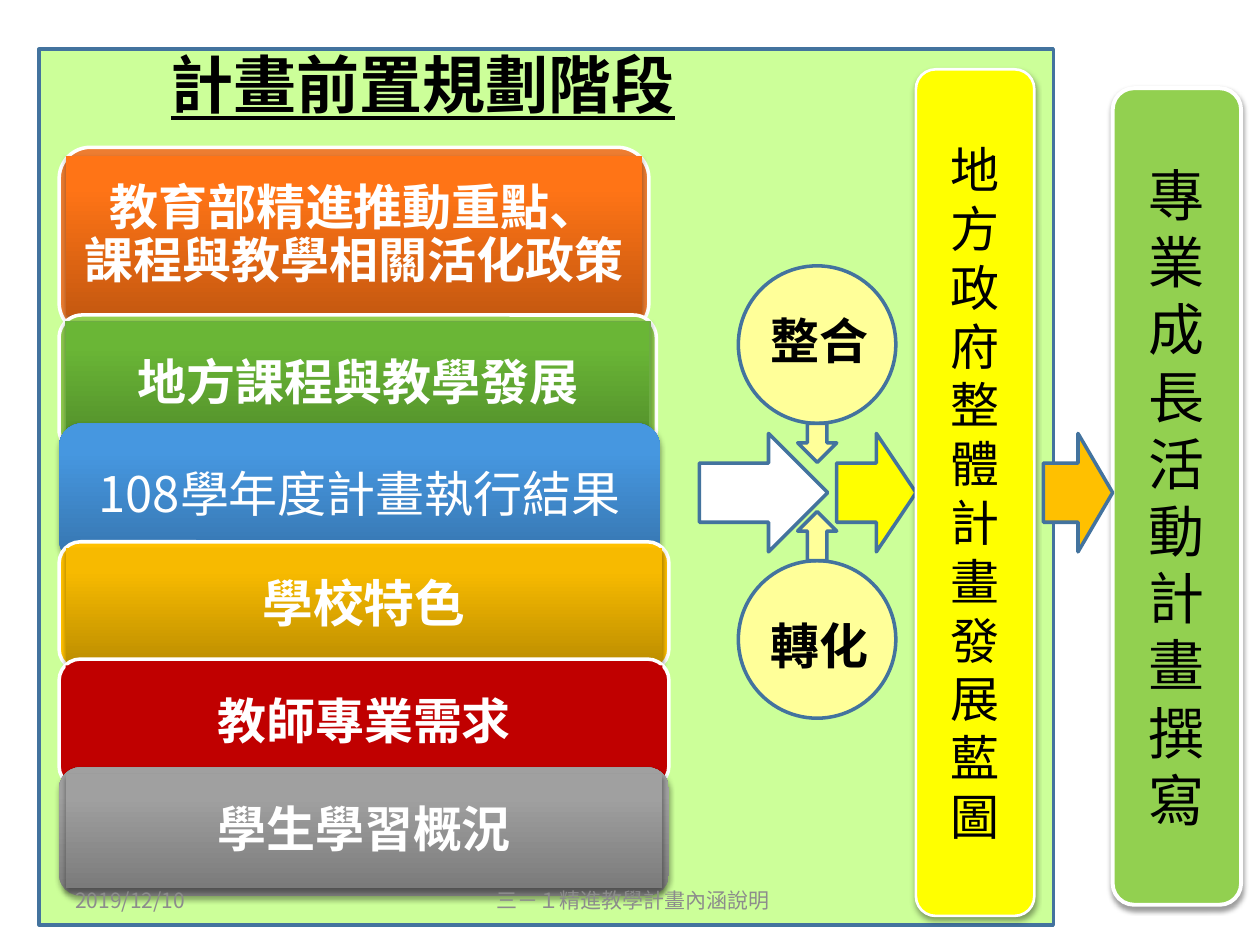
from lxml import etree
from pptx import Presentation
from pptx.dml.color import RGBColor
from pptx.enum import shapes, text
from pptx.oxml import ns
from pptx.util import Pt

SANS, LATIN = "Noto Sans CJK SC", "Calibri"
BLACK = RGBColor(0x00, 0x00, 0x00)
WHITE = RGBColor(0xFF, 0xFF, 0xFF)
GRAY = RGBColor(0x8C, 0x8C, 0x8C)
NAVY = RGBColor(0x43, 0x73, 0x9E)
MINT = RGBColor(0xCC, 0xFF, 0x99)
GREEN = RGBColor(0x92, 0xD0, 0x50)
CREAM = RGBColor(0xFF, 0xFF, 0x99)
YELLOW = RGBColor(0xFF, 0xFF, 0x00)
AMBER = RGBColor(0xFF, 0xC0, 0x00)
ORANGE = RGBColor(0xED, 0x7D, 0x31)
RED = RGBColor(0xC0, 0x00, 0x00)
LEAF = RGBColor(0x6D, 0xAC, 0x43)
# Gradients are lists: bottom colour, top colour
ORANGE_FADE = [RGBColor(0xC6, 0x59, 0x10), RGBColor(0xFF, 0x74, 0x16)]
GREEN_FADE = [RGBColor(0x51, 0x8D, 0x2A), RGBColor(0x6A, 0xB6, 0x36)]
BLUE_FADE = [RGBColor(0x36, 0x74, 0xAD), RGBColor(0x46, 0x97, 0xE0)]
GOLD_FADE = [RGBColor(0xBE, 0x8F, 0x00), RGBColor(0xF7, 0xBA, 0x00)]
GRAY_FADE = [RGBColor(0x7B, 0x7B, 0x7B), RGBColor(0xA0, 0xA0, 0xA0)]

CENTER, LEFT = text.PP_ALIGN.CENTER, text.PP_ALIGN.LEFT
MIDDLE, TOP = text.MSO_ANCHOR.MIDDLE, text.MSO_ANCHOR.TOP
SHAPE = shapes.MSO_SHAPE

# Content
TITLE = "計畫前置規劃階段"
CARD_LEFT, FACE_INSET = 33.8, 3.7
# lines, top, width, height, frame fill, frame outline, face (top, height, fill, outline), size
CARDS = [
    (["教育部精進推動重點、", "課程與教學相關活化政策"], 84.2, 337, 106.6,
     ORANGE, WHITE, (89.3, 90.7, ORANGE_FADE, None), 28),
    (["地方課程與教學發展"], 180, 341.3, 78.5,
     GREEN, WHITE, (183.6, 71.3, GREEN_FADE, LEAF), 28),
    (["108學年度計畫執行結果"], 241.9, 343.4, 79.9, BLUE_FADE, None, None, 28),
    (["學校特色"], 309.6, 348.5, 73.4,
     AMBER, WHITE, (313.2, 65.5, GOLD_FADE, None), 29),
    (["教師專業需求"], 376.6, 348.5, 73.4,
     RED, WHITE, (380.2, 65.5, RED, None), 28),
    (["學生學習概況"], 438.5, 348.5, 73.4,
     GRAY_FADE, None, (442.1, 65.5, GRAY_FADE, None), 28),
]
CIRCLE_LEFT, CIRCLE_SIZE = 421.9, 90
CIRCLES = [("整合", 151.9, 174.2), ("轉化", 320.4, 348.5)]  # label, top, label top
FLOW_TOP, FLOW_HEIGHT = 247.7, 67.7
ARROWS = [
    (SHAPE.RIGHT_ARROW, 596.2, FLOW_TOP, 39.6, FLOW_HEIGHT, AMBER),
    (SHAPE.RIGHT_ARROW, 399.6, FLOW_TOP, 73.4, FLOW_HEIGHT, WHITE),
    (SHAPE.DOWN_ARROW, 455.8, 241.9, 22.3, 22.3, CREAM),
    (SHAPE.UP_ARROW, 455.8, 292.3, 22.3, 28.1, CREAM),
    (SHAPE.RIGHT_ARROW, 478.1, FLOW_TOP, 45.4, FLOW_HEIGHT, YELLOW),
]
# label, left, top, width, height, fill, outline width, size
BARS = [
    ("專業成長活動計畫撰寫", 635.8, 50.4, 73.4, 466.6, GREEN, 2.25, 32),
    ("地方政府整體計畫發展藍圖", 523.4, 39.6, 67.7, 483.8, YELLOW, 1.5, 28),
]
FOOTERS = [
    ("三－１精進教學計畫內涵說明", 247.7, 228.2, CENTER),
    ("2019/12/10", 36, 167.8, LEFT),
]


def write(part, lines, size, color, bold=False, align=CENTER, anchor=MIDDLE,
          font=SANS, leading=1.2, inset=7.2):
    frame = part.text_frame
    frame.word_wrap = True
    frame.vertical_anchor = anchor
    frame.margin_left = frame.margin_right = Pt(inset)
    frame.margin_top = frame.margin_bottom = Pt(3.6)
    for index, line in enumerate(lines):
        paragraph = frame.paragraphs[0] if index == 0 else frame.add_paragraph()
        paragraph.alignment = align
        paragraph.line_spacing = Pt(round(size * leading, 1))
        run = paragraph.add_run()
        run.text = line
        run.font.size, run.font.bold = Pt(size), bold
        run.font.color.rgb = color
        run.font.name = font
        east_asian = etree.Element(ns.qn("a:ea"), typeface=SANS)
        run.font._element.find(ns.qn("a:latin")).addnext(east_asian)
    return frame


def draw(kind, left, top, width, height, fill, line=None, line_width=2, shadow=0):
    part = slide.shapes.add_shape(kind, Pt(left), Pt(top), Pt(width), Pt(height))
    if isinstance(fill, list):
        part.fill.gradient()
        part.fill.gradient_angle = 90
        for stop, color, position in zip(part.fill.gradient_stops, fill, (0, 0.8)):
            stop.color.rgb, stop.position = color, position
    else:
        part.fill.solid()
        part.fill.fore_color.rgb = fill
    if line is None:
        part.line.fill.background()
    else:
        part.line.color.rgb = line
        part.line.width = Pt(line_width)
    part.shadow.inherit = False
    if shadow:
        effects = part.element.spPr.find(ns.qn("a:effectLst"))
        outer = etree.SubElement(effects, ns.qn("a:outerShdw"), blurRad=str(Pt(3.1)),
                                 dist=str(Pt(1.7)), dir="5400000", rotWithShape="0")
        tone = etree.SubElement(outer, ns.qn("a:srgbClr"), val="000000")
        etree.SubElement(tone, ns.qn("a:alpha"), val=str(shadow * 1000))
    return part


def add_label(left, top, width, height):
    return slide.shapes.add_textbox(Pt(left), Pt(top), Pt(width), Pt(height))


def add_bar(label, left, top, width, height, fill, line_width, size):
    bar = draw(SHAPE.ROUNDED_RECTANGLE, left, top, width, height, fill, WHITE,
               line_width, shadow=38)
    write(bar, [label], size, BLACK)


deck = Presentation()
deck.slide_width, deck.slide_height = Pt(720), Pt(540)
slide = deck.slides.add_slide(deck.slide_layouts[5])

# Panel behind the title
panel = draw(SHAPE.RECTANGLE, 22.3, 28.1, 579.6, 500.4, MINT, NAVY)
title = slide.shapes.title
title.element.addprevious(panel.element)
title.left, title.top, title.width, title.height = Pt(16.6), Pt(16.6), Pt(450), Pt(61.9)
heading = write(title, [TITLE], 36, BLACK, bold=True)
heading.paragraphs[0].runs[0].font.underline = True

# Outcome bar, circles and arrows
add_bar(*BARS[0])
for label, top, label_top in CIRCLES:
    draw(SHAPE.OVAL, CIRCLE_LEFT, top, CIRCLE_SIZE, CIRCLE_SIZE, CREAM, NAVY)
    write(add_label(433.4, label_top, 80, 41), [label], 28, BLACK, bold=True,
          align=LEFT, anchor=TOP, font=LATIN)
for kind, left, top, width, height, fill in ARROWS:
    draw(kind, left, top, width, height, fill, NAVY)

# Stack of planning inputs
for lines, top, width, height, fill, line, face, size in CARDS:
    card = draw(SHAPE.ROUNDED_RECTANGLE, CARD_LEFT, top, width, height, fill, line,
                shadow=0 if line else 35)
    if face is None:
        write(card, lines, size, WHITE)
        continue
    face_top, face_height, face_fill, face_line = face
    front = draw(SHAPE.RECTANGLE, CARD_LEFT + FACE_INSET, face_top,
                 width - 2 * FACE_INSET, face_height, face_fill, face_line, 0.75,
                 shadow=35 if isinstance(face_fill, list) else 0)
    write(front, lines, size, WHITE, bold=True, leading=1.08, inset=8)

# Blueprint bar and footers
add_bar(*BARS[1])
for label, left, width, align in FOOTERS:
    write(add_label(left, 500.4, width, 28.4), [label], 12, GRAY, align=align)

deck.save("out.pptx")
